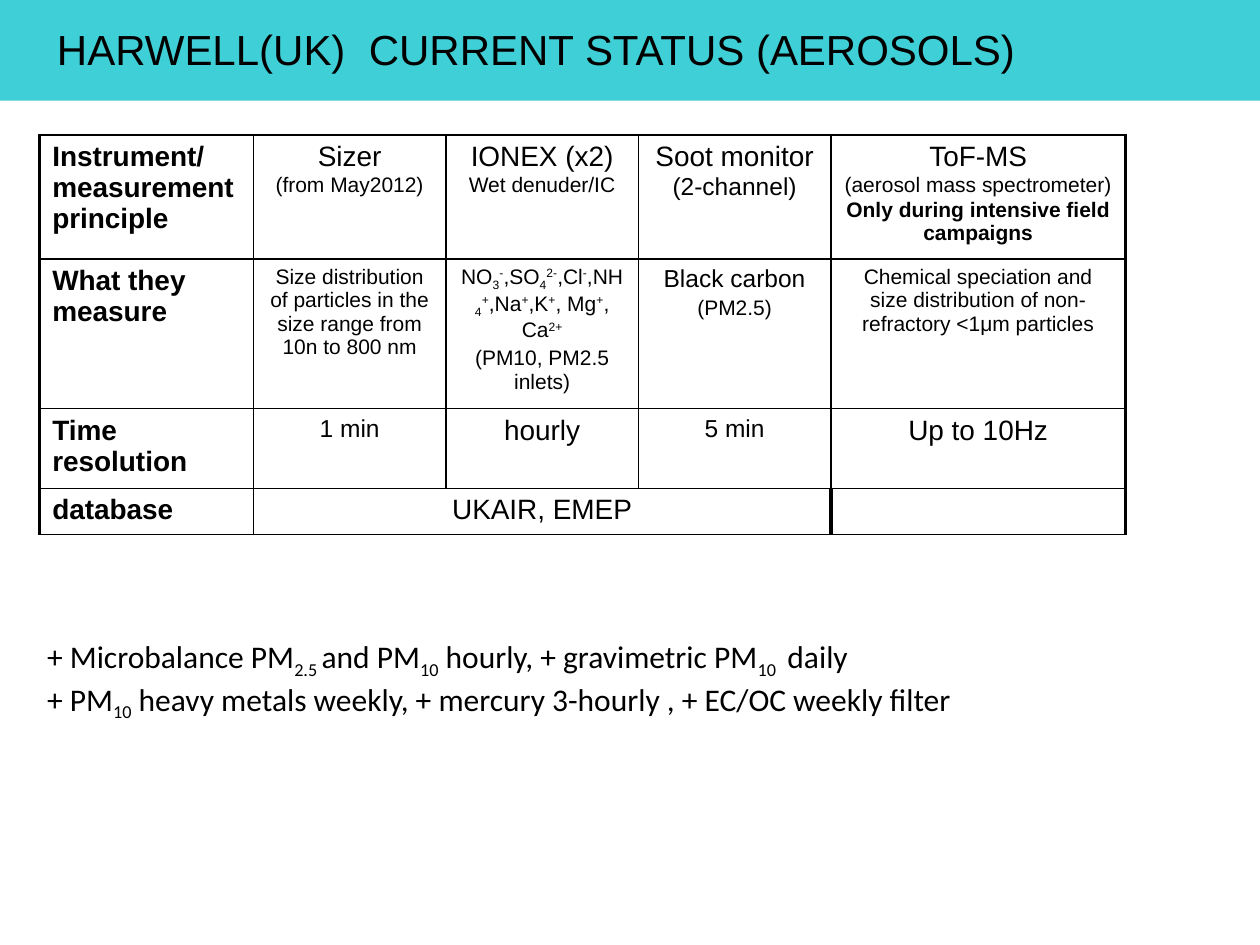
from lxml.etree import SubElement
from pptx import Presentation
from pptx.dml.color import RGBColor
from pptx.enum.shapes import MSO_SHAPE
from pptx.enum.text import MSO_ANCHOR, MSO_AUTO_SIZE, PP_ALIGN
from pptx.oxml.ns import qn
from pptx.util import Cm, Pt

TURQUOISE = RGBColor(0x3F, 0xCF, 0xD6)
BLACK = RGBColor(0x00, 0x00, 0x00)

BASELINES = {"_": "-25000", "^": "30000"}
THIN, THICK = 1, 2.25
COLUMN_WIDTHS = [4.31, 3.88, 3.88, 3.88, 5.94]
ROW_HEIGHTS = [2.11, 0.94, 0.94, 0.86]  # least heights; rows grow with their text
PARAGRAPH_GAPS = [0.05, 0.2, 0.2, 0.2]  # share of the text size, by row

# Each cell is a list of paragraphs: (text, size) or (text, size, bold).
IONS = "NO|_3|^-|,SO|_4|^2-|,Cl|^-|,NH|_4|^+|,Na|^+|,K|^+|, Mg|^+|, Ca|^2+"
INSTRUMENTS = [
    [
        [("Instrument/ measurement principle", 16, True)],
        [("Sizer", 16), ("(from May2012)", 12)],
        [("IONEX (x2)", 16), ("Wet denuder/IC", 12)],
        [("Soot monitor", 16), ("(2-channel)", 14)],
        [("ToF-MS", 16), ("(aerosol mass spectrometer)", 12),
         ("Only during intensive field campaigns", 12, True)],
    ],
    [
        [("What they measure", 16, True)],
        [("Size distribution of particles in the size range from 10n to 800 nm", 12)],
        [(IONS, 12), ("(PM10, PM2.5 inlets)", 12)],
        [("Black carbon", 14), ("(PM2.5)", 12)],
        [("Chemical speciation and size distribution of non-refractory <1μm particles", 12)],
    ],
    [
        [("Time resolution", 16, True)],
        [("1 min", 14)],
        [("hourly", 16)],
        [("5 min", 14)],
        [("Up to 10Hz", 16)],
    ],
    [[("database", 16, True)], [("UKAIR, EMEP", 16)], [], [], []],
]
OTHER_MEASUREMENTS = [
    "+ Microbalance PM|_2.5 |and PM|_10| hourly, + gravimetric PM|_10 | daily",
    "+ PM|_10| heavy metals weekly, + mercury 3-hourly , + EC/OC weekly filter",
]


def apply_format(target, values):
    for name, value in values.items():
        setattr(target, name, value)


def write_runs(paragraph, text, font_name, size, bold=False):
    """Split text at | into runs; a leading _ lowers a run and ^ raises it."""
    for piece in text.split("|"):
        baseline = BASELINES.get(piece[0])
        run = paragraph.add_run()
        run.text = piece[1:] if baseline else piece
        apply_format(run.font, {"name": font_name, "size": Pt(size), "bold": bold})
        run.font.color.rgb = BLACK
        if baseline:
            run.font._element.set("baseline", baseline)


def write_paragraphs(frame, paragraphs, font_name, align, gap=0):
    for index, (text, size, *bold) in enumerate(paragraphs):
        paragraph = frame.add_paragraph() if index else frame.paragraphs[0]
        paragraph.alignment = align
        if index:
            paragraph.space_before = Pt(round(gap * size, 2))
        write_runs(paragraph, text, font_name, size, *bold)


def add_title_band(slide, left, top, width, height):
    band = slide.shapes.add_shape(MSO_SHAPE.RECTANGLE, left, top, width, height)
    band.shadow.inherit = False
    band.fill.solid()
    band.fill.fore_color.rgb = TURQUOISE
    band.line.fill.background()

    title = slide.shapes.add_textbox(left + Cm(0.9), top + Cm(0.29),
                                     width - Cm(1.8), height - Cm(0.63))
    apply_format(title.text_frame,
                 {"word_wrap": True, "vertical_anchor": MSO_ANCHOR.MIDDLE})
    write_paragraphs(title.text_frame,
                     [("HARWELL(UK)  CURRENT STATUS (AEROSOLS)", 24)],
                     "Arial", PP_ALIGN.LEFT)


def set_borders(cell, widths):
    properties = cell._tc.get_or_add_tcPr()
    for side, width in widths.items():
        line = SubElement(properties, qn(f"a:ln{side}"), w=str(Pt(width)))
        fill = SubElement(line, qn("a:solidFill"))
        SubElement(fill, qn("a:srgbClr"), val=str(BLACK))


def add_instrument_table(slide, left, top, width, height):
    row_count, column_count = len(ROW_HEIGHTS), len(COLUMN_WIDTHS)
    last_row, last_column = row_count - 1, column_count - 1
    frame = slide.shapes.add_table(row_count, column_count, left, top, width, height)
    table = frame.table
    apply_format(table, {"first_row": False, "horz_banding": False})
    for column, column_width in zip(table.columns, COLUMN_WIDTHS):
        column.width = Cm(column_width)
    for row, row_height in zip(table.rows, ROW_HEIGHTS):
        row.height = Cm(row_height)
    frame.height = height
    table.cell(last_row, 1).merge(table.cell(last_row, last_column - 1))

    for r, contents in enumerate(INSTRUMENTS):
        for c, paragraphs in enumerate(contents):
            cell = table.cell(r, c)
            database_edge = r == last_row and c >= last_column - 1
            set_borders(cell, {
                "L": THICK if c == 0 or (database_edge and c == last_column) else THIN,
                "R": THICK if c == last_column or database_edge else THIN,
                "T": THIN,
                "B": THIN,
            })
            cell.fill.background()
            align = PP_ALIGN.CENTER if c else PP_ALIGN.LEFT
            write_paragraphs(cell.text_frame, paragraphs, "Arial", align,
                             PARAGRAPH_GAPS[r])
            if not paragraphs:
                SubElement(cell.text_frame.paragraphs[0]._p,
                           qn("a:endParaRPr"), sz="1600")


def add_other_measurements(slide, left, top, width, height):
    box = slide.shapes.add_textbox(left, top, width, height)
    apply_format(box.text_frame, {"word_wrap": False,
                                  "auto_size": MSO_AUTO_SIZE.SHAPE_TO_FIT_TEXT})
    write_paragraphs(box.text_frame, [(line, 18) for line in OTHER_MEASUREMENTS],
                     "Calibri", PP_ALIGN.LEFT)


def main():
    deck = Presentation()
    apply_format(deck, {"slide_width": Cm(25.4), "slide_height": Cm(19.05)})
    slide = deck.slides.add_slide(deck.slide_layouts[6])
    add_title_band(slide, 0, 0, deck.slide_width, Cm(2.03))
    add_instrument_table(slide, Cm(0.8), Cm(2.72), Cm(21.89), Cm(7.95))
    add_other_measurements(slide, Cm(0.7), Cm(12.71), Cm(19), Cm(1.8))
    deck.save("out.pptx")


if __name__ == "__main__":
    main()
